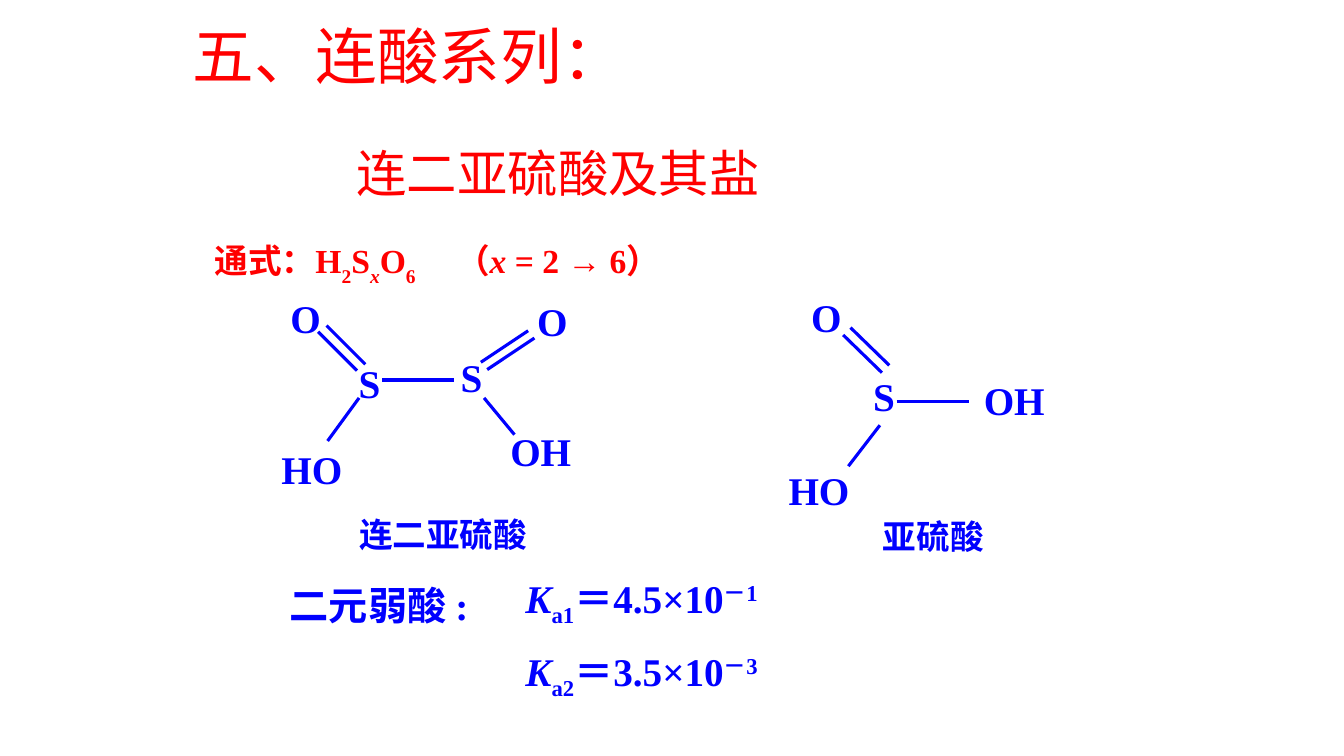
from dataclasses import dataclass

from lxml.etree import SubElement
from pptx import Presentation
from pptx.dml.color import RGBColor
from pptx.enum.shapes import MSO_CONNECTOR
from pptx.enum.text import MSO_AUTO_SIZE, PP_ALIGN
from pptx.oxml.ns import qn
from pptx.util import Pt

EMU_PER_PX = 9525


def px(n):
    return n * EMU_PER_PX


@dataclass(frozen=True)
class Theme:
    red: RGBColor = RGBColor(0xFF, 0x00, 0x00)
    blue: RGBColor = RGBColor(0x00, 0x00, 0xFF)
    title_font: str = "Arial"
    subtitle_font: str = "Calibri"
    formula_font: str = "Times New Roman"
    caption_font: str = "Arial Narrow"
    title: int = 44
    subtitle: int = 36
    atom: int = 28
    caption: int = 24
    bond: float = 2.25


class SlideBuilder:
    def __init__(self, slide, theme):
        self.s = slide
        self.theme = theme

    def box(self, x, y, w, h, wrap=True):
        """Add an empty text box and return its text frame."""
        sp = self.s.shapes.add_textbox(px(x), px(y), px(w), px(h))
        tf = sp.text_frame
        tf.word_wrap = wrap
        tf.auto_size = MSO_AUTO_SIZE.SHAPE_TO_FIT_TEXT
        return tf

    def runs(self, p, parts, font, size, color, bold=True):
        """Add runs given as (text, baseline percent, italic)."""
        for text, baseline, italic in parts:
            r = p.add_run()
            r.text = text
            r.font.name = font
            r.font.size = Pt(size)
            r.font.color.rgb = color
            r.font.bold = bold
            r.font.italic = italic
            if baseline:
                r.font._element.set("baseline", str(baseline * 1000))

    def heading(self, text, x, y, w, h, font, size, wrap=True, spacing=None):
        p = self.box(x, y, w, h, wrap).paragraphs[0]
        p.line_spacing = spacing
        self.runs(p, [(text, 0, False)], font, size, self.theme.red, bold=False)

    def label(self, text, x, y, w, h, font, size):
        p = self.box(x, y, w, h).paragraphs[0]
        p.alignment = PP_ALIGN.CENTER
        self.runs(p, [(text, 0, False)], font, size, self.theme.blue)

    def atom(self, text, x, y, w):
        self.label(text, x, y, w, 55, self.theme.formula_font, self.theme.atom)

    def caption(self, text, x, y, w):
        self.label(text, x, y, w, 48, self.theme.caption_font, self.theme.caption)

    def bond(self, x1, y1, x2, y2):
        c = self.s.shapes.add_connector(
            MSO_CONNECTOR.STRAIGHT, px(x1), px(y1), px(x2), px(y2))
        c.line.color.rgb = self.theme.blue
        c.line.width = Pt(self.theme.bond)
        SubElement(c._element.spPr, qn("a:effectLst"))

    def double_bond(self, x1, y1, x2, y2, dx, dy):
        self.bond(x1, y1, x2, y2)
        self.bond(x1 + dx, y1 + dy, x2 + dx, y2 + dy)

    def general_formula(self, parts, x, y, w, h, tab):
        p = self.box(x, y, w, h).paragraphs[0]
        tabs = SubElement(p._p.get_or_add_pPr(), qn("a:tabLst"))
        SubElement(tabs, qn("a:tab"), pos=str(px(tab)), algn="l")
        p.alignment = PP_ALIGN.JUSTIFY
        p.line_spacing = 1.5
        self.runs(p, parts, self.theme.formula_font, self.theme.caption, self.theme.red)

    def constants(self, rows, x, y, w, h, indent):
        tf = self.box(x, y, w, h)
        for i, (index, value, exponent) in enumerate(rows):
            p = tf.add_paragraph() if i else tf.paragraphs[0]
            pPr = p._p.get_or_add_pPr()
            pPr.set("marL", str(px(indent)))
            pPr.set("indent", "0")
            if i:
                p.space_before = Pt(self.theme.atom / 2)
            parts = [("K", 0, True), (index, -25, False),
                     (f"＝{value}×10", 0, False), (exponent, 30, False)]
            self.runs(p, parts, self.theme.formula_font, self.theme.atom, self.theme.blue)


def main():
    prs = Presentation()
    prs.slide_width, prs.slide_height = px(1280), px(720)
    theme = Theme()
    b = SlideBuilder(prs.slides.add_slide(prs.slide_layouts[6]), theme)

    # Headings
    b.heading("五、连酸系列：", 174, 53, 434, 47, theme.title_font, theme.title,
              wrap=False, spacing=Pt(22.5))
    b.heading("连二亚硫酸及其盐", 330, 131, 503, 68, theme.subtitle_font, theme.subtitle)

    # General formula
    b.general_formula(
        [("通式：H", 0, False), ("2", -30, False), ("S", 0, False), ("x", -30, True),
         ("O", 0, False), ("6", -30, False), ("\t（", 0, False), ("x", 0, True),
         (" = 2 → 6）", 0, False)],
        195, 201, 720, 60, tab=230)

    # Atoms of dithionous acid, then of sulfurous acid
    for atom in [("O", 266, 276, 50), ("S", 322, 337, 60), ("HO", 252, 419, 90),
                 ("S", 415, 332, 68), ("O", 492, 278, 68), ("OH", 460, 402, 110),
                 ("O", 762, 275, 50), ("S", 812, 350, 60), ("HO", 735, 439, 90),
                 ("OH", 911, 354, 110)]:
        b.atom(*atom)

    # Bonds
    for ends in [(364, 362, 432, 362), (342, 379, 312, 420), (461, 379, 490, 414),
                 (854, 382, 923, 382), (838, 405, 808, 444)]:
        b.bond(*ends)
    for ends in [(311, 310, 348, 347, -8, 6), (458, 345, 503, 315, 6, 7),
                 (810, 312, 847, 348, -7, 7)]:
        b.double_bond(*ends)

    # Names of the acids
    b.caption("连二亚硫酸", 297, 485, 250)
    b.caption("亚硫酸", 817, 487, 144)

    # Acid constants
    b.atom("二元弱酸 :", 228, 549, 266)
    b.constants([("a1", "4.5", "－1"), ("a2", "3.5", "－3")],
                398, 542, 691, 122, indent=93)

    prs.save("out.pptx")


if __name__ == "__main__":
    main()
